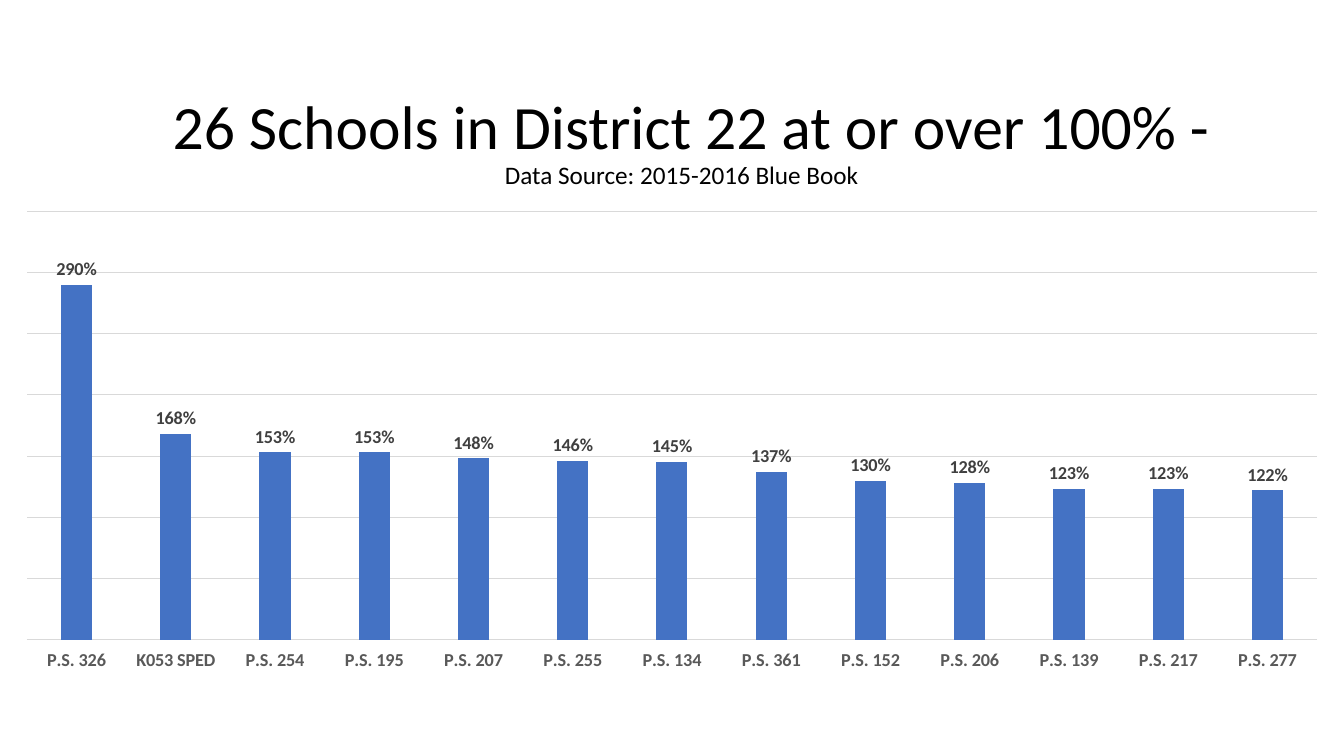
from pptx import Presentation
from pptx.chart.data import CategoryChartData
from pptx.dml.color import RGBColor
from pptx.enum.chart import XL_CHART_TYPE, XL_LABEL_POSITION, XL_TICK_LABEL_POSITION, XL_TICK_MARK
from pptx.enum.text import MSO_ANCHOR, PP_ALIGN
from pptx.util import Inches, Pt

SCHOOLS = {
    "P.S. 326": 2.9, "K053 SPED": 1.68, "P.S. 254": 1.53, "P.S. 195": 1.53,
    "P.S. 207": 1.48, "P.S. 255": 1.46, "P.S. 134": 1.45, "P.S. 361": 1.37,
    "P.S. 152": 1.3, "P.S. 206": 1.28, "P.S. 139": 1.23, "P.S. 217": 1.23,
    "P.S. 277": 1.22,
}


def color(code):
    return RGBColor.from_string(code)


class Deck:
    face = "Calibri"
    ink = "000000"
    axis = "595959"
    label = "404040"
    rule = "D9D9D9"
    bar = "4472C4"

    def __init__(self):
        self.prs = Presentation()
        self.prs.slide_width = Inches(13.33)
        self.prs.slide_height = Inches(7.5)
        self.slide = self.prs.slides.add_slide(self.prs.slide_layouts[6])

    def style(self, font, size, code, bold=False):
        font.name = self.face
        font.size = Pt(size)
        font.bold = bold
        font.color.rgb = color(code)

    def line(self, form):
        form.line.color.rgb = color(self.rule)
        form.line.width = Pt(0.75)

    def title(self, text, sizes, left, top, width, height):
        box = self.slide.shapes.add_textbox(
            Inches(left), Inches(top), Inches(width), Inches(height))
        frame = box.text_frame
        frame.word_wrap = True
        frame.vertical_anchor = MSO_ANCHOR.MIDDLE
        para = frame.paragraphs[0]
        para.text = text
        para.alignment = PP_ALIGN.CENTER
        para.line_spacing = 0.9
        for run, size in zip(para.runs, sizes):
            self.style(run.font, size, self.ink)

    def chart(self, values, left, top, width, height):
        data = CategoryChartData(number_format="0%")
        data.categories = list(values)
        data.add_series("Series 1", list(values.values()))
        chart = self.slide.shapes.add_chart(
            XL_CHART_TYPE.COLUMN_CLUSTERED, Inches(left), Inches(top),
            Inches(width), Inches(height), data).chart
        chart.has_legend = False
        chart.has_title = False
        self.style(chart.font, 10, self.ink)

        # Columns and their labels
        plot = chart.plots[0]
        plot.gap_width = 219
        plot.overlap = -27
        plot.vary_by_categories = False
        fill = plot.series[0].format.fill
        fill.solid()
        fill.fore_color.rgb = color(self.bar)
        plot.has_data_labels = True
        labels = plot.data_labels
        labels.show_value = True
        labels.position = XL_LABEL_POSITION.OUTSIDE_END
        labels.number_format = "0%"
        labels.number_format_is_linked = False
        self.style(labels.font, 13, self.label, True)

        # School axis
        base = chart.category_axis
        base.major_tick_mark = XL_TICK_MARK.NONE
        base.minor_tick_mark = XL_TICK_MARK.NONE
        base.tick_label_position = XL_TICK_LABEL_POSITION.LOW
        self.line(base.format)
        self.style(base.tick_labels.font, 13, self.axis, True)

        # Hidden percent axis with gridlines
        scale = chart.value_axis
        scale.visible = False
        scale.minimum_scale = 0
        scale.maximum_scale = 3.5
        scale.major_unit = 0.5
        scale.has_major_gridlines = True
        self.line(scale.major_gridlines.format)
        scale.tick_labels.number_format = "0%"
        scale.tick_labels.number_format_is_linked = False


def main():
    deck = Deck()
    deck.title(" 26 Schools in District 22 at or over 100% -\v"
               "Data Source: 2015-2016 Blue Book ",
               (44, 18), 1.04, 0.69, 11.5, 1.45)
    deck.chart(SCHOOLS, 0, 2, 13.33, 4.76)
    deck.prs.save("out.pptx")


if __name__ == "__main__":
    main()
